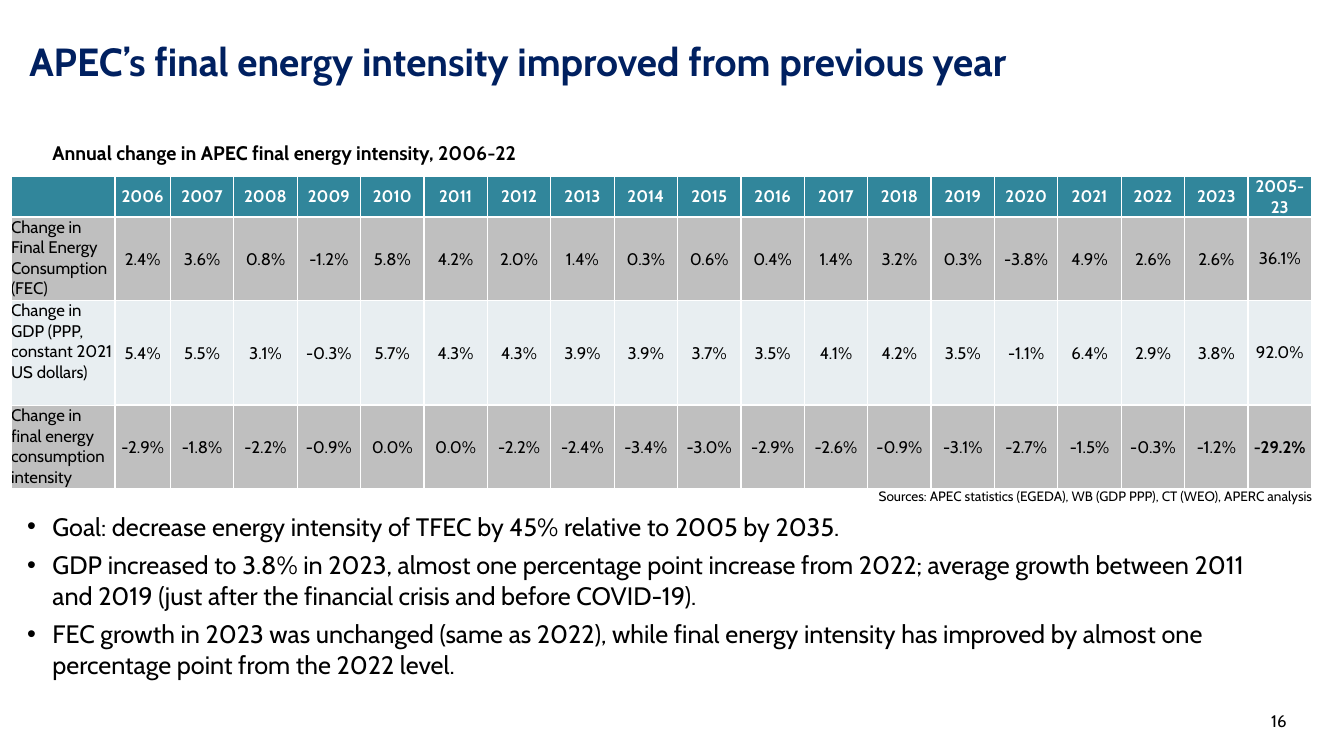
from lxml.etree import SubElement
from pptx import Presentation
from pptx.dml.color import RGBColor
from pptx.enum.text import MSO_ANCHOR as Anchor, MSO_AUTO_SIZE as AutoSize, PP_ALIGN as Align
from pptx.oxml import parse_xml
from pptx.oxml.ns import nsdecls, qn
from pptx.util import Pt

SCALE = 9144
FONT = "Cabin"
BLACK, WHITE, NAVY = "000000", "FFFFFF", "002060"
TEAL, GREY, PALE = "31869B", "BFBFBF", "E8EEF1"

YEARS = [str(year) for year in range(2006, 2024)] + ["2005-23"]
CHANGES = [
    ("Change in Final Energy Consumption (FEC)",
     "2.4 3.6 0.8 -1.2 5.8 4.2 2.0 1.4 0.3 0.6 0.4 1.4 3.2 0.3 -3.8 4.9 2.6 2.6 36.1"),
    ("Change in GDP (PPP, constant 2021 US dollars)",
     "5.4 5.5 3.1 -0.3 5.7 4.3 4.3 3.9 3.9 3.7 3.5 4.1 4.2 3.5 -1.1 6.4 2.9 3.8 92.0"),
    ("Change in final energy consumption intensity",
     "-2.9 -1.8 -2.2 -0.9 0.0 0.0 -2.2 -2.4 -3.4 -3.0 -2.9 -2.6 -0.9 -3.1 -2.7 -1.5 -0.3 -1.2 -29.2"),
]
FINDINGS = [
    "Goal: decrease energy intensity of TFEC by 45% relative to 2005 by 2035.",
    "GDP increased to 3.8% in 2023, almost one percentage point increase from 2022; "
    "average growth between 2011 and 2019 (just after the financial crisis and before COVID-19).",
    "FEC growth in 2023 was unchanged (same as 2022), while final energy intensity "
    "has improved by almost one percentage point from the 2022 level.",
]


def px(length):
    return int(length * SCALE)


def color(value):
    return RGBColor.from_string(value)


def write(frame, *lines, size=12, ink=BLACK, bold=False, align=Align.LEFT,
          anchor=Anchor.TOP, spacing=1.0, after=0, bullet=None):
    frame.word_wrap = True
    frame.vertical_anchor = anchor
    for index, line in enumerate(lines):
        paragraph = frame.paragraphs[0] if index == 0 else frame.add_paragraph()
        paragraph.alignment = align
        paragraph.line_spacing = spacing
        paragraph.space_before = Pt(0)
        paragraph.space_after = Pt(after)
        if bullet:
            props = paragraph._p.get_or_add_pPr()
            props.set("marL", str(px(25)))
            props.set("indent", str(px(-25)))
            SubElement(props, qn("a:buFont"), typeface="Arial")
            SubElement(props, qn("a:buChar"), char=bullet)
        run = paragraph.add_run()
        run.text = line
        run.font.name = FONT
        run.font.size = Pt(size)
        run.font.bold = bold
        run.font.color.rgb = color(ink)


def fill_placeholder(holder, box, *lines, **style):
    holder.left, holder.top, holder.width, holder.height = map(px, box)
    holder.text_frame.auto_size = AutoSize.NONE
    write(holder.text_frame, *lines, **style)


def add_label(slide, box, line, **style):
    write(slide.shapes.add_textbox(*map(px, box)).text_frame, line, **style)


def set_borders(cell, top=1, bottom=1):
    props = cell._tc.get_or_add_tcPr()
    widths = {"lnL": 1, "lnR": 1, "lnT": top, "lnB": bottom}
    for index, (side, width) in enumerate(widths.items()):
        props.insert(index, parse_xml(
            f'<a:{side} {nsdecls("a")} w="{Pt(width)}"><a:solidFill>'
            f'<a:srgbClr val="{WHITE}"/></a:solidFill></a:{side}>'))


def style_cell(cell, line, fill, inset=0, top=1, bottom=1, **style):
    cell.margin_left = cell.margin_right = cell.margin_top = px(inset)
    cell.margin_bottom = 0
    cell.fill.solid()
    cell.fill.fore_color.rgb = color(fill)
    set_borders(cell, top, bottom)
    anchor = style.pop("anchor", Anchor.MIDDLE)
    cell.vertical_anchor = anchor
    if line:
        write(cell.text_frame, line, **style)
        cell.vertical_anchor = anchor


def add_intensity_table(slide, box):
    left, top, width, height = box
    label_width, first_width = 103, 55
    year_width = (width - label_width - first_width) / (len(YEARS) - 1)
    column_widths = [label_width, first_width] + [year_width] * (len(YEARS) - 1)
    row_heights = [40, 83, 104, 83]
    table = slide.shapes.add_table(
        len(row_heights), len(column_widths), *map(px, box)).table
    table.horz_banding = False
    for column, column_width in zip(table.columns, column_widths):
        column.width = px(column_width)
    for row, row_height in zip(table.rows, row_heights):
        row.height = px(row_height)

    for index, year in enumerate([""] + YEARS):
        style_cell(table.cell(0, index), year, TEAL, bottom=1.5,
                   ink=WHITE, bold=True, align=Align.CENTER)
    for row, (measure, values) in enumerate(CHANGES, 1):
        fill, edge = (GREY, 1.5) if row % 2 else (PALE, 1)
        style_cell(table.cell(row, 0), measure, fill, anchor=Anchor.TOP,
                   top=1.5 if row == 1 else 1)
        for index, value in enumerate(values.split(), 1):
            is_total = index == len(YEARS)
            style_cell(table.cell(row, index), f"{value}%", fill, top=edge,
                       inset=0 if is_total else 1, align=Align.CENTER,
                       bold=is_total and row == len(CHANGES))


def add_table_region(slide, box):
    left, top, width, height = box
    add_label(slide, (left + 31, top - 38, 531, 28),
              "Annual change in APEC final energy intensity, 2006-22",
              size=14, bold=True, spacing=0.9)
    add_label(slide, (left + width - 461, top + height - 7, 472, 26),
              "Sources: APEC statistics (EGEDA), WB (GDP PPP), CT (WEO), APERC analysis",
              size=9.7, align=Align.RIGHT, spacing=1.1)
    add_intensity_table(slide, box)


def build_slide(deck):
    slide = deck.slides.add_slide(deck.slide_layouts[1])
    title, findings = slide.placeholders
    fill_placeholder(title, (19, 30, 1239, 59),
                     "APEC’s final energy intensity improved from previous year",
                     size=28, ink=NAVY, bold=True, spacing=0.9, anchor=Anchor.BOTTOM)
    fill_placeholder(findings, (17, 502, 1269, 169), *FINDINGS,
                     size=18, after=6, bullet="•")
    add_label(slide, (986, 695, 300, 40), "16",
              align=Align.RIGHT, anchor=Anchor.MIDDLE)
    add_table_region(slide, (11, 175, 1290, 310))


def main():
    deck = Presentation()
    deck.slide_width, deck.slide_height = px(1333), px(750)
    build_slide(deck)
    deck.save("out.pptx")


if __name__ == "__main__":
    main()
